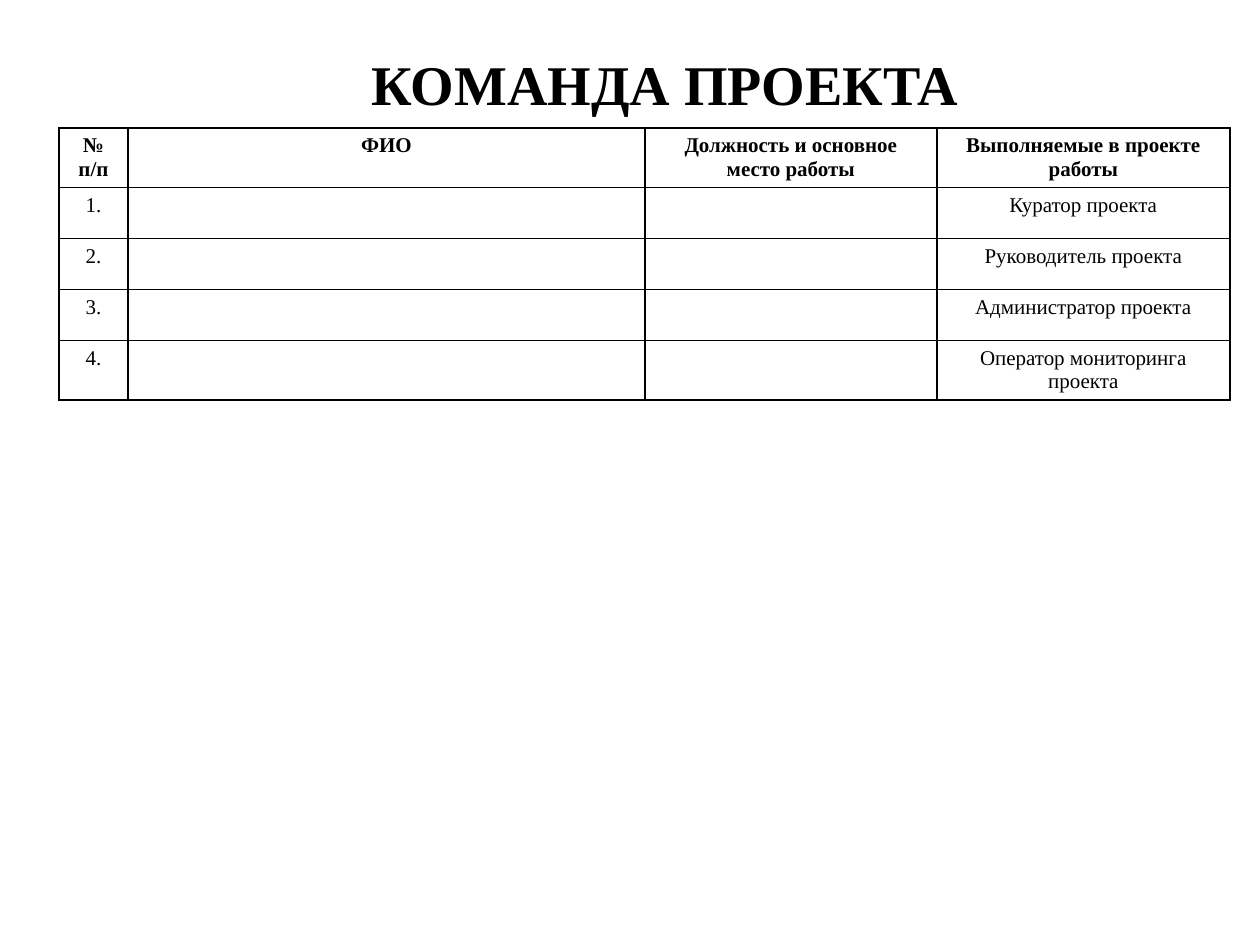
import pptx
import pptx.dml.color
import pptx.enum.text
import pptx.oxml
import pptx.oxml.ns
import pptx.util

SCALE = 914400 // 126
BLACK = pptx.dml.color.RGBColor(0, 0, 0)
FACE = "Times New Roman"
TITLE = {"name": FACE, "size": pptx.util.Pt(32), "bold": True}
HEAD = {"name": FACE, "size": pptx.util.Pt(12), "bold": True}
BODY = {**HEAD, "bold": False}

COLS = [69, 517, 292, 293]
ROW = 51
HEADS = ["№ п/п", "ФИО", "Должность и основное место работы",
         "Выполняемые в проекте работы"]
ROLES = ["Куратор проекта", "Руководитель проекта",
         "Администратор проекта", "Оператор мониторинга проекта"]


def px(num):
    return pptx.util.Emu(num * SCALE)


def write(frame, text, form):
    para = frame.paragraphs[0]
    para.alignment = pptx.enum.text.PP_ALIGN.CENTER
    if not text:
        return
    run = para.add_run()
    run.text = text
    for key, val in form.items():
        setattr(run.font, key, val)
    run.font.color.rgb = BLACK


def border(cell):
    """Draw a 1 pt line on each side, ahead of the cell's fill."""
    props = cell._tc.get_or_add_tcPr()
    for pos, side in enumerate(("lnL", "lnR", "lnT", "lnB")):
        line = pptx.oxml.parse_xml(
            f'<a:{side} {pptx.oxml.ns.nsdecls("a")} w="12700"><a:solidFill>'
            f'<a:srgbClr val="{BLACK}"/></a:solidFill></a:{side}>')
        props.insert(pos, line)


def add_title(slide, text):
    title = slide.shapes.title
    box = {"left": 158, "top": 39, "width": 1014, "height": 88}
    for key, val in box.items():
        setattr(title, key, px(val))
    frame = title.text_frame
    frame.word_wrap = True
    frame.auto_size = pptx.enum.text.MSO_AUTO_SIZE.NONE
    frame.vertical_anchor = pptx.enum.text.MSO_ANCHOR.MIDDLE
    write(frame, text, TITLE)


def add_team(slide):
    rows = [HEADS] + [[f"{num}.", "", "", role]
                      for num, role in enumerate(ROLES, 1)]
    table = slide.shapes.add_table(
        len(rows), len(COLS), px(59), px(128),
        px(sum(COLS)), px(ROW * len(rows))).table
    table.first_row = table.horz_banding = False
    for col, width in zip(table.columns, COLS):
        col.width = px(width)
    for i, row in enumerate(rows):
        table.rows[i].height = px(ROW)
        for j, text in enumerate(row):
            cell = table.cell(i, j)
            cell.fill.background()
            border(cell)
            write(cell.text_frame, text, BODY if i else HEAD)


def main():
    deck = pptx.Presentation()
    deck.slide_width, deck.slide_height = px(1260), px(945)
    slide = deck.slides.add_slide(deck.slide_layouts[5])
    add_title(slide, "КОМАНДА ПРОЕКТА")
    add_team(slide)
    deck.save("out.pptx")


if __name__ == "__main__":
    main()
